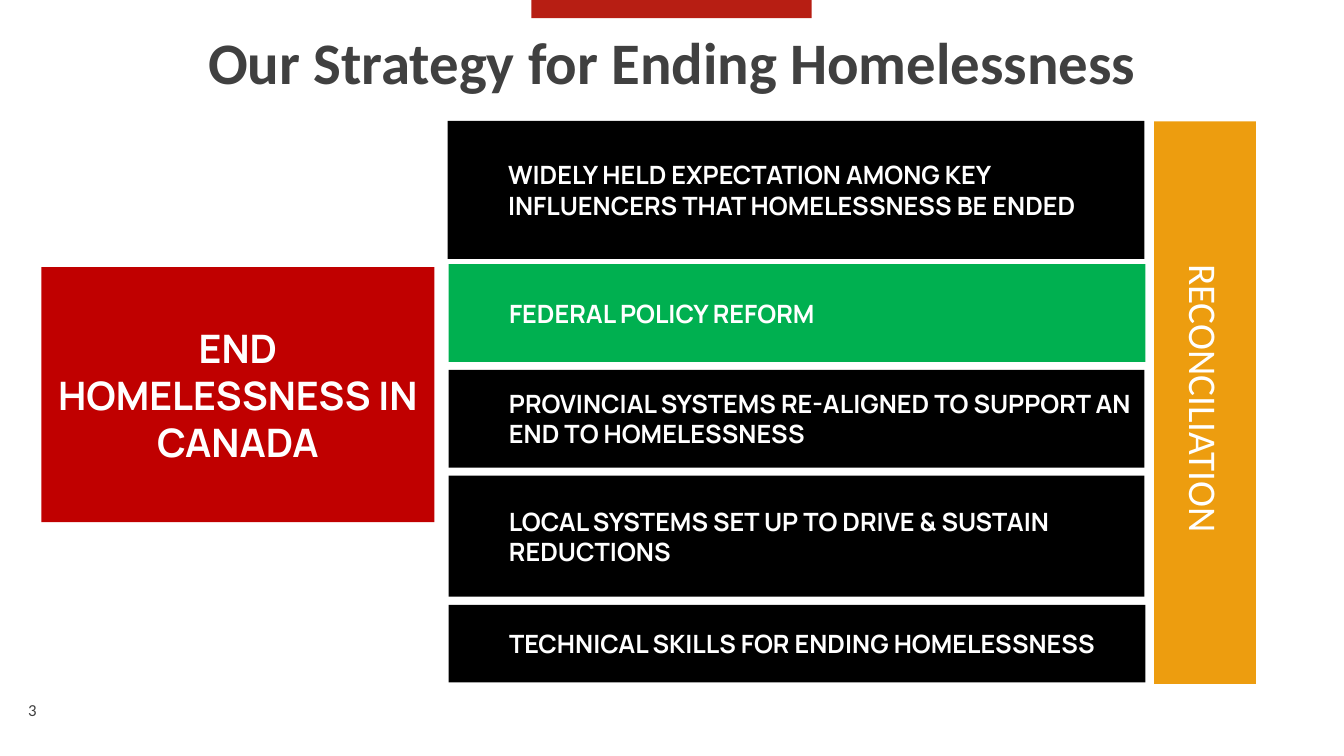
from pptx import Presentation
from pptx.dml.color import RGBColor as RGB
from pptx.enum.shapes import MSO_SHAPE as Shape
from pptx.enum.text import MSO_ANCHOR as Anchor, PP_ALIGN as Align
from pptx.util import Inches, Pt

RED = RGB(0xC0, 0x00, 0x00)
BRICK = RGB(0xB7, 0x1E, 0x13)
GREEN = RGB(0x00, 0xB0, 0x50)
GOLD = RGB(0xED, 0x9D, 0x0F)
BLACK = RGB(0x00, 0x00, 0x00)
WHITE = RGB(0xFF, 0xFF, 0xFF)
GREY = RGB(0x40, 0x40, 0x40)

deck = Presentation()
deck.slide_width, deck.slide_height = Inches(13.33), Inches(7.5)
slide = deck.slides.add_slide(deck.slide_layouts[5])


def write(shape, text, align, color, form):
    frame = shape.text_frame
    frame.word_wrap = True
    frame.vertical_anchor = Anchor.MIDDLE
    para = frame.paragraphs[0]
    para.alignment = align
    run = para.add_run()
    run.text = text
    run.font.color.rgb = color
    for key, value in form.items():
        setattr(run.font, key, value)
    return para


def block(left, top, width, height, fill):
    shape = slide.shapes.add_shape(
        Shape.RECTANGLE, Inches(left), Inches(top), Inches(width), Inches(height))
    shape.shadow.inherit = False
    shape.fill.solid()
    shape.fill.fore_color.rgb = fill
    shape.line.fill.background()
    frame = shape.text_frame
    for side in ("left", "right", "top", "bottom"):
        setattr(frame, "margin_" + side, Inches(0.1))
    return shape


# Accent bar at the top edge
block(5.27, 0, 2.78, 0.18, BRICK)

# Title
title = slide.shapes.title
title.left, title.top = Inches(1), Inches(0.3)
title.width, title.height = Inches(11.33), Inches(0.69)
head = write(title, "Our Strategy for Ending Homelessness", Align.CENTER, GREY,
             {"name": "Calibri", "size": Pt(42), "bold": True})
head.line_spacing = 0.9

# Page number
page = slide.shapes.add_textbox(Inches(0.18), Inches(6.84), Inches(3), Inches(0.4))
write(page, "3", Align.LEFT, GREY, {"name": "Calibri", "size": Pt(12)})

# Goal
goal = block(0.41, 2.65, 3.9, 2.53, RED)
write(goal, "END HOMELESSNESS IN CANADA", Align.CENTER, WHITE,
      {"name": "Manrope", "size": Pt(28), "bold": True})

# Stack of strategy bars
bars = [
    (4.44, 1.2, 6.91, 1.37, BLACK,
     "WIDELY HELD EXPECTATION AMONG KEY INFLUENCERS THAT HOMELESSNESS BE ENDED"),
    (4.45, 2.62, 6.91, 0.97, GREEN, "FEDERAL POLICY REFORM"),
    (4.45, 3.67, 6.9, 0.97, BLACK,
     "PROVINCIAL SYSTEMS RE-ALIGNED TO SUPPORT AN END TO HOMELESSNESS"),
    (4.45, 4.72, 6.9, 1.2, BLACK,
     "LOCAL SYSTEMS SET UP TO DRIVE & SUSTAIN REDUCTIONS"),
    (4.45, 6, 6.91, 0.77, BLACK, "TECHNICAL SKILLS FOR ENDING HOMELESSNESS"),
]
for left, top, width, height, fill, text in bars:
    bar = block(left, top, width, height, fill)
    para = write(bar, text, Align.LEFT, WHITE,
                 {"name": "Manrope", "size": Pt(18), "bold": True})
    props = para._p.get_or_add_pPr()
    props.set("marL", str(Inches(0.5)))
    props.set("indent", "0")

# Turned side band
band = block(9.16, 3.49, 5.58, 1.01, GOLD)
band.rotation = 90
write(band, "RECONCILIATION ", Align.CENTER, WHITE,
      {"name": "Calibri", "size": Pt(28)})

deck.save("out.pptx")
